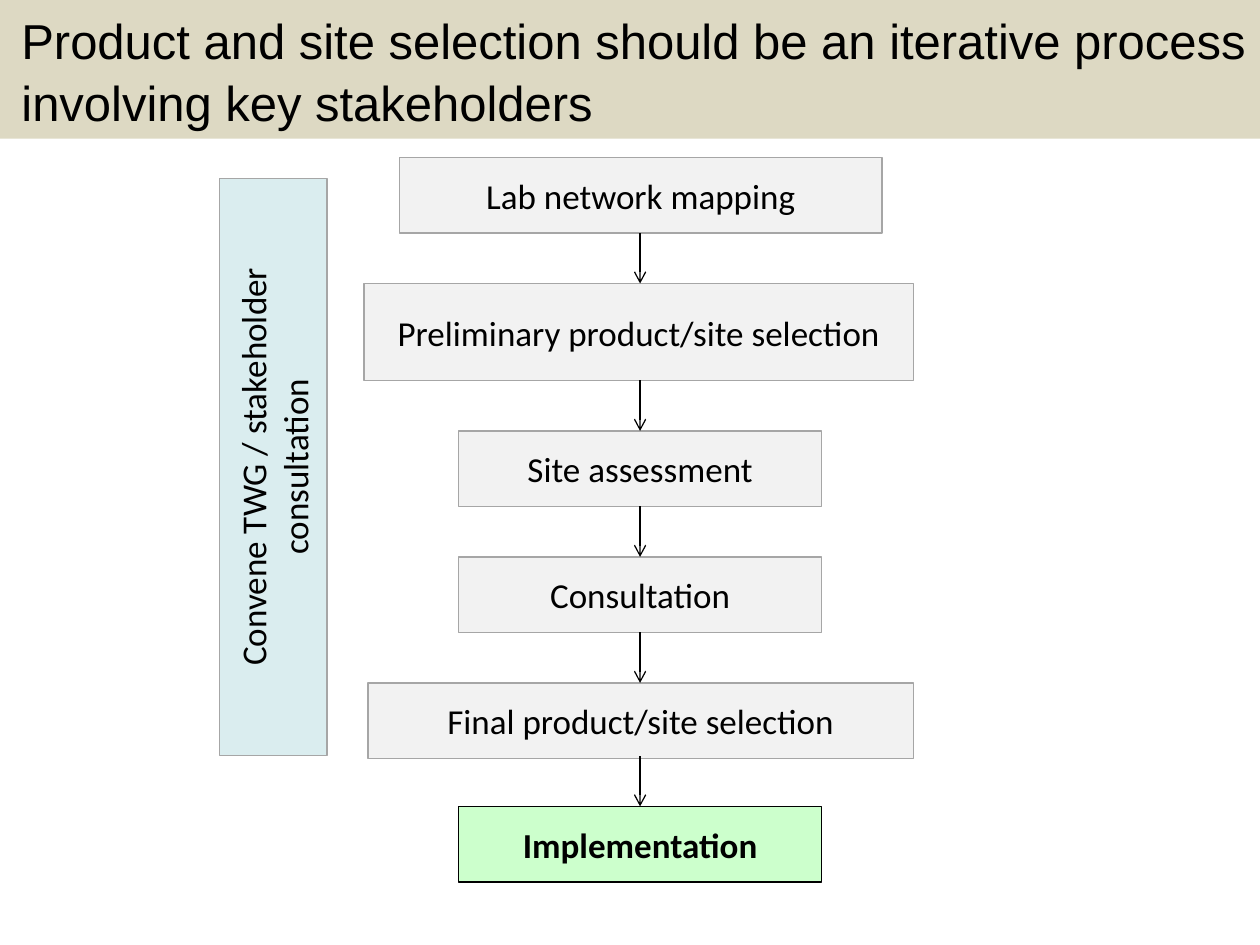
from lxml import etree
from pptx import Presentation
from pptx.dml.color import RGBColor
from pptx.enum.shapes import MSO_CONNECTOR, MSO_SHAPE
from pptx.enum.text import MSO_ANCHOR, PP_ALIGN
from pptx.oxml.ns import qn
from pptx.util import Inches, Pt

RECT = MSO_SHAPE.RECTANGLE
STRAIGHT = MSO_CONNECTOR.STRAIGHT
MIDDLE = MSO_ANCHOR.MIDDLE
LEFT, CENTER = PP_ALIGN.LEFT, PP_ALIGN.CENTER
WIDE, HIGH = 10, 7.5
AXIS, GAP = 5.08, 0.4
BLACK, GREY, EDGE = "000000", "F2F2F2", "A6A6A6"
STEPS = [
    ("Lab network mapping", 3.17, 1.25, 3.83, 0.6),
    ("Preliminary product/site selection", 2.89, 2.25, 4.36, 0.77),
    ("Site assessment", 3.64, 3.42, 2.88, 0.6),
    ("Consultation", 3.64, 4.42, 2.88, 0.6),
    ("Final product/site selection", 2.92, 5.42, 4.33, 0.6),
    ("Implementation", 3.64, 6.4, 2.88, 0.6),
]


def paint(color, code):
    """Set a fill, line or font colour from a hex string."""
    color.rgb = RGBColor.from_string(code)


def add_box(slide, text, area, fill, edge=None, size=20, face="Calibri", align=CENTER):
    """Add a filled rectangle with one paragraph and return it."""
    box = slide.shapes.add_shape(RECT, *map(Inches, area))
    box.shadow.inherit = False
    box.fill.solid()
    paint(box.fill.fore_color, fill)
    if edge:
        paint(box.line.color, edge)
        box.line.width = Pt(0.75)
    else:
        box.line.fill.background()
    frame = box.text_frame
    frame.word_wrap = True
    frame.vertical_anchor = MIDDLE
    para = frame.paragraphs[0]
    para.text = text
    para.alignment = align
    para.font.name = face
    para.font.size = Pt(size)
    paint(para.font.color, BLACK)
    return box


def add_title(slide, text):
    """Add the title band across the top of the slide."""
    band = add_box(slide, text, (0, 0, WIDE, 1.1), "DDD9C3",
                   size=28, face="Arial", align=LEFT)
    band.text_frame.margin_left = Inches(0.17)
    band.text_frame.margin_right = Inches(0.05)
    band.text_frame.paragraphs[0].line_spacing = 1.05


def add_arrow(slide, end):
    """Add a downward arrow on the axis that stops at the given height."""
    points = map(Inches, (AXIS, end - GAP, AXIS, end))
    arrow = slide.shapes.add_connector(STRAIGHT, *points)
    paint(arrow.line.color, BLACK)
    arrow.line.width = Pt(0.75)
    etree.SubElement(arrow.line._get_or_add_ln(), qn("a:tailEnd"), type="arrow")
    etree.SubElement(arrow._element.spPr, qn("a:effectLst"))


def add_flow(slide):
    """Add the chain of steps, the last one set apart as the goal."""
    for text, *area in STEPS[:-1]:
        add_box(slide, text, area, GREY, EDGE)
    text, *area = STEPS[-1]
    goal = add_box(slide, text, area, "CCFFCC", BLACK)
    goal.text_frame.paragraphs[0].font.bold = True
    for step in STEPS[1:]:
        add_arrow(slide, step[2])


def main():
    """Build and save the slide."""
    deck = Presentation()
    deck.slide_width, deck.slide_height = Inches(WIDE), Inches(HIGH)
    slide = deck.slides.add_slide(deck.slide_layouts[6])
    add_title(slide, "Product and site selection should be an iterative "
                     "process involving key stakeholders")
    side = add_box(slide, "Convene TWG / stakeholder consultation",
                   (-0.12, 3.28, 4.58, 0.85), "DAEDEF", EDGE)
    side.rotation = 270
    add_flow(slide)
    deck.save("out.pptx")


if __name__ == "__main__":
    main()
